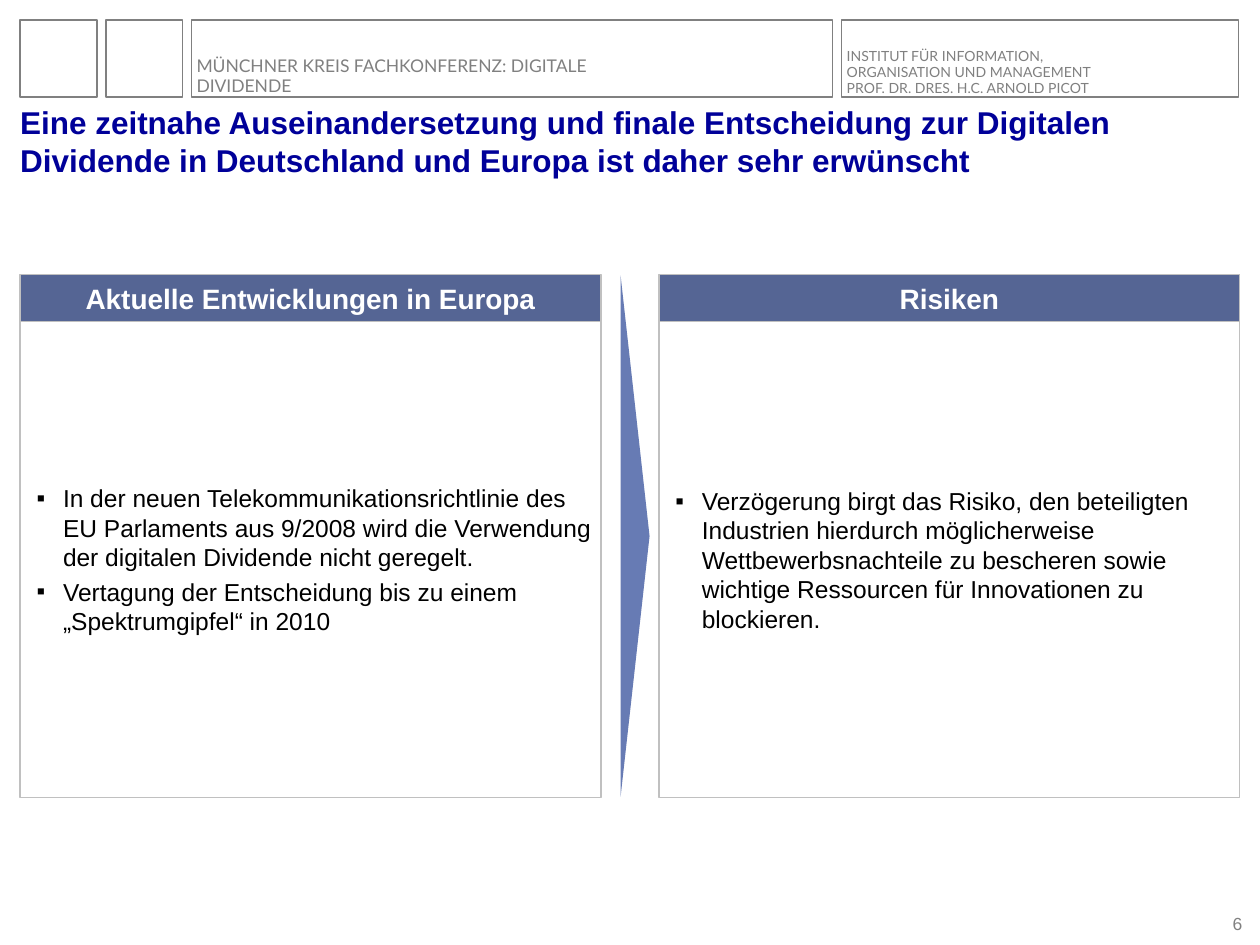
"""Builds the slide on developments and risks of the digital dividend."""
from dataclasses import dataclass

from lxml import etree
from pptx import Presentation
from pptx.dml.color import RGBColor
from pptx.enum.shapes import MSO_SHAPE
from pptx.enum.text import MSO_ANCHOR, MSO_AUTO_SIZE, PP_ALIGN
from pptx.oxml.ns import qn
from pptx.util import Inches, Pt

RECTANGLE, TRIANGLE = MSO_SHAPE.RECTANGLE, MSO_SHAPE.ISOSCELES_TRIANGLE
BOTTOM, MIDDLE = MSO_ANCHOR.BOTTOM, MSO_ANCHOR.MIDDLE
LEFT, CENTER, RIGHT = PP_ALIGN.LEFT, PP_ALIGN.CENTER, PP_ALIGN.RIGHT
NO_AUTOFIT = MSO_AUTO_SIZE.NONE
TITLE_ONLY = 5

WIDTH, HEIGHT = 10, 7.5
MARGIN = 0.16
CONTENT_WIDTH = WIDTH - 2 * MARGIN
BANNER_SIZE, BANNER_GAP = 0.61, 0.07
PANEL_WIDTH, PANEL_TOP = 4.61, 2.18
HEADER_HEIGHT, BODY_HEIGHT = 0.37, 3.78
ARROW_LENGTH, ARROW_DEPTH = 4.14, 0.23
ARROW_CENTER = 5.04

GRAY, SILVER, WHITE, BLACK = "808080", "C0C0C0", "FFFFFF", "000000"
NAVY, SLATE, BLUE = "000099", "556594", "677BB4"


@dataclass(frozen=True)
class Box:
    """Position and size in inches."""
    left: float
    top: float
    width: float
    height: float

    def lengths(self) -> tuple:
        return tuple(Inches(round(value, 2)) for value in
                     (self.left, self.top, self.width, self.height))


@dataclass(frozen=True)
class TextStyle:
    """Look of a text and its place in its frame."""
    size: float
    color: str
    font: str = "Arial"
    bold: bool = False
    align: PP_ALIGN = LEFT
    anchor: MSO_ANCHOR = BOTTOM
    inset: float = 0
    wrap: bool = True
    line_spacing: float = 1.0


@dataclass(frozen=True)
class Panel:
    """A headed box with bullet points."""
    left: float
    heading: str
    points: tuple


TITLE_STYLE = TextStyle(18, NAVY, bold=True)
NUMBER_STYLE = TextStyle(10, GRAY, align=RIGHT, wrap=False)
EVENT_STYLE = TextStyle(10, GRAY, "Lato", line_spacing=0.95)
INSTITUTE_STYLE = TextStyle(8, GRAY, "Lato", line_spacing=0.95)
HEADING_STYLE = TextStyle(16, WHITE, bold=True, align=CENTER, anchor=MIDDLE,
                          inset=0.04, wrap=False)
POINT_STYLE = TextStyle(14, BLACK, anchor=MIDDLE, inset=0.04)

TITLE = ("Eine zeitnahe Auseinandersetzung und finale Entscheidung zur Digitalen "
         "Dividende in Deutschland und Europa ist daher sehr erwünscht")
EVENT = "MÜNCHNER KREIS FACHKONFERENZ: DIGITALE DIVIDENDE"
INSTITUTE = ("INSTITUT FÜR INFORMATION,\vORGANISATION UND MANAGEMENT\n"
             "PROF. DR. DRES. H.C. ARNOLD PICOT")
BANNER_WIDTHS = (BANNER_SIZE, BANNER_SIZE, 5.09, 3.15)
PANELS = (
    Panel(MARGIN, "Aktuelle Entwicklungen in Europa", (
        "In der neuen Telekommunikationsrichtlinie des EU Parlaments aus 9/2008 "
        "wird die Verwendung der digitalen Dividende nicht geregelt.",
        "Vertagung der Entscheidung bis zu einem „Spektrumgipfel“ in 2010")),
    Panel(WIDTH - MARGIN - PANEL_WIDTH, "Risiken", (
        "Verzögerung birgt das Risiko, den beteiligten Industrien hierdurch "
        "möglicherweise Wettbewerbsnachteile zu bescheren sowie wichtige "
        "Ressourcen für Innovationen zu blockieren.",)),
)


def rgb(color: str) -> RGBColor:
    """Turn a hex string into a colour."""
    return RGBColor.from_string(color)


def write(shape, text: str, style: TextStyle) -> None:
    """Fill a shape with styled text."""
    frame = shape.text_frame
    frame.text = text
    frame.auto_size = NO_AUTOFIT
    frame.word_wrap = style.wrap
    frame.vertical_anchor = style.anchor
    frame.margin_left = frame.margin_right = Inches(style.inset)
    frame.margin_top = frame.margin_bottom = Inches(style.inset)
    for paragraph in frame.paragraphs:
        paragraph.alignment = style.align
        paragraph.line_spacing = style.line_spacing
        for run in paragraph.runs:
            run.font.name = style.font
            run.font.size = Pt(style.size)
            run.font.bold = style.bold
            run.font.color.rgb = rgb(style.color)


def add_text(slide, box: Box, text: str, style: TextStyle) -> None:
    """Add a text box."""
    write(slide.shapes.add_textbox(*box.lengths()), text, style)


def add_shape(slide, kind: MSO_SHAPE, box: Box, fill: str = "", line: str = ""):
    """Add a flat preset shape; an empty colour means none."""
    shape = slide.shapes.add_shape(kind, *box.lengths())
    shape.shadow.inherit = False
    if fill:
        shape.fill.solid()
        shape.fill.fore_color.rgb = rgb(fill)
    else:
        shape.fill.background()
    if line:
        shape.line.color.rgb = rgb(line)
        shape.line.width = Pt(0.75)
    else:
        shape.line.fill.background()
    return shape


def add_bullet(paragraph) -> None:
    """Give a paragraph a square bullet with a hanging indent."""
    properties = paragraph._p.get_or_add_pPr()
    properties.set("marL", str(Inches(0.3)))
    properties.set("indent", str(Inches(-0.21)))
    color = etree.SubElement(properties, qn("a:buClr"))
    etree.SubElement(color, qn("a:srgbClr"), val=BLACK)
    etree.SubElement(properties, qn("a:buFont"), typeface="Arial")
    etree.SubElement(properties, qn("a:buChar"), char="▪")
    paragraph.space_after = Pt(2.8)


def add_banner(slide) -> None:
    """Draw the row of frames at the top with its two captions."""
    left = MARGIN
    for width in BANNER_WIDTHS:
        add_shape(slide, RECTANGLE, Box(left, MARGIN, width, BANNER_SIZE), line=GRAY)
        left += width + BANNER_GAP
    add_text(slide, Box(1.56, 0.36, 3.55, 0.41), EVENT, EVENT_STYLE)
    add_text(slide, Box(6.72, 0.31, 2.6, 0.46), INSTITUTE, INSTITUTE_STYLE)


def add_panel(slide, panel: Panel) -> None:
    """Draw one headed panel."""
    body_box = Box(panel.left, PANEL_TOP + HEADER_HEIGHT, PANEL_WIDTH, BODY_HEIGHT)
    body = add_shape(slide, RECTANGLE, body_box, WHITE, SILVER)
    write(body, "\n".join(panel.points), POINT_STYLE)
    for paragraph in body.text_frame.paragraphs:
        add_bullet(paragraph)
    header_box = Box(panel.left, PANEL_TOP, PANEL_WIDTH, HEADER_HEIGHT)
    header = add_shape(slide, RECTANGLE, header_box, SLATE, SILVER)
    write(header, panel.heading, HEADING_STYLE)


def add_arrow(slide) -> None:
    """Draw the slim triangle pointing from the left panel to the right."""
    middle = PANEL_TOP + (HEADER_HEIGHT + BODY_HEIGHT) / 2
    box = Box(ARROW_CENTER - ARROW_LENGTH / 2, middle - ARROW_DEPTH / 2,
              ARROW_LENGTH, ARROW_DEPTH)
    add_shape(slide, TRIANGLE, box, BLUE).rotation = 90


def main() -> None:
    """Build and save the presentation."""
    presentation = Presentation()
    presentation.slide_width, presentation.slide_height = Inches(WIDTH), Inches(HEIGHT)
    slide = presentation.slides.add_slide(presentation.slide_layouts[TITLE_ONLY])
    add_banner(slide)
    title = slide.shapes.title
    title.left, title.top, title.width, title.height = Box(
        MARGIN, 0.84, CONTENT_WIDTH, 0.58).lengths()
    write(title, TITLE, TITLE_STYLE)
    add_text(slide, Box(9.58, 7.24, 0.28, 0.17), "6", NUMBER_STYLE)
    for panel in PANELS:
        add_panel(slide, panel)
    add_arrow(slide)
    presentation.save("out.pptx")


if __name__ == "__main__":
    main()
